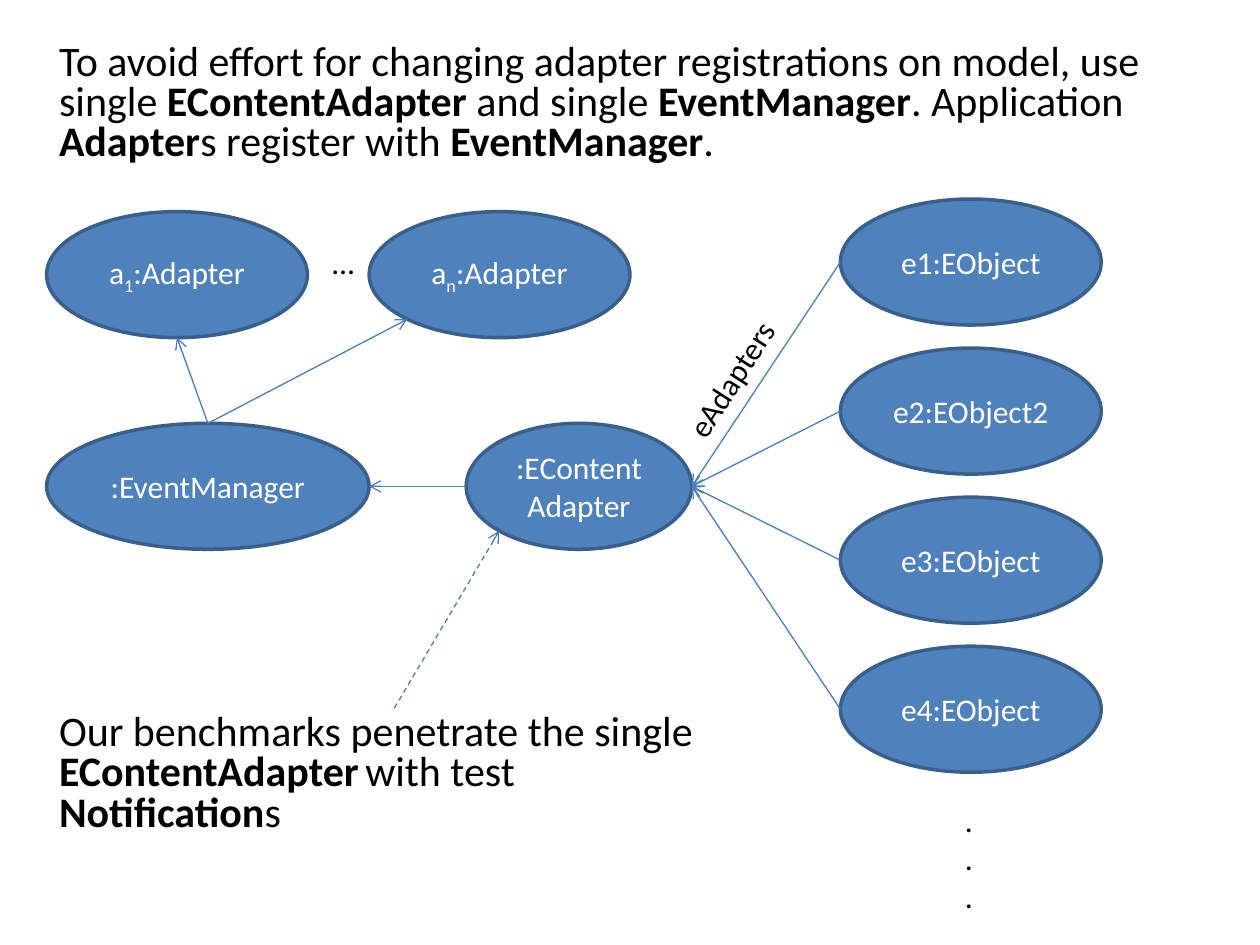
from dataclasses import dataclass
from math import sqrt

from lxml import etree
from pptx import Presentation
from pptx.dml.color import RGBColor
from pptx.enum.dml import MSO_LINE_DASH_STYLE as DASH
from pptx.enum.shapes import MSO_CONNECTOR, MSO_SHAPE
from pptx.enum.text import MSO_ANCHOR, MSO_AUTO_SIZE, PP_ALIGN
from pptx.oxml.ns import qn
from pptx.util import Inches, Pt


@dataclass(frozen=True)
class Theme:
    font: str = "Calibri"
    fill: RGBColor = RGBColor(0x4F, 0x81, 0xBD)
    outline: RGBColor = RGBColor(0x3A, 0x5F, 0x8C)
    arrow: RGBColor = RGBColor(0x4B, 0x7E, 0xBC)
    light: RGBColor = RGBColor(0xFF, 0xFF, 0xFF)
    dark: RGBColor = RGBColor(0x00, 0x00, 0x00)
    label: int = 18
    body: int = 24
    gap: int = 16


THEME = Theme()
HEIGHT = 1  # every ellipse
DIAGONAL = 1 / sqrt(2)


def add_span(para, text, size, color, bold=False, baseline=None):
    span = para.add_run()
    span.text = text
    font = span.font
    font.name, font.size, font.bold = THEME.font, Pt(size), bold
    font.color.rgb = color
    if baseline:
        font._element.set("baseline", str(baseline))


def add_ellipse(page, left, top, width, name, subscript="", rest=""):
    oval = page.shapes.add_shape(
        MSO_SHAPE.OVAL, Inches(left), Inches(top), Inches(width), Inches(HEIGHT))
    oval.shadow.inherit = False
    oval.fill.solid()
    oval.fill.fore_color.rgb = THEME.fill
    oval.line.color.rgb = THEME.outline
    oval.line.width = Pt(2)
    frame = oval.text_frame
    frame.word_wrap = True
    frame.vertical_anchor = MSO_ANCHOR.MIDDLE
    para = frame.paragraphs[0]
    para.alignment = PP_ALIGN.CENTER
    add_span(para, name, THEME.label, THEME.light)
    if subscript:
        add_span(para, subscript, THEME.label, THEME.light, baseline=-25000)
        add_span(para, rest, THEME.label, THEME.light)
    return oval


def rim(oval, across, down):
    """Point on an ellipse, as a direction in half-widths and half-heights."""
    return (int(oval.left + oval.width * (1 + across) / 2),
            int(oval.top + oval.height * (1 + down) / 2))


def add_arrow(page, start, end, dashed=False):
    arrow = page.shapes.add_connector(MSO_CONNECTOR.STRAIGHT, *start, *end)
    arrow.line.color.rgb = THEME.arrow
    arrow.line.width = Pt(0.75)
    if dashed:
        arrow.line.dash_style = DASH.DASH
    etree.SubElement(arrow.line._get_or_add_ln(), qn("a:tailEnd"), type="arrow")
    etree.SubElement(arrow._element.spPr, qn("a:effectLst"))
    return arrow


def add_box(page, left, top, width, height, wrap):
    box = page.shapes.add_textbox(
        Inches(left), Inches(top), Inches(width), Inches(height))
    box.text_frame.word_wrap = wrap
    box.text_frame.auto_size = MSO_AUTO_SIZE.SHAPE_TO_FIT_TEXT
    return box


def add_label(page, left, top, width, height, lines, rotation=0):
    box = add_box(page, left, top, width, height, wrap=False)
    box.rotation = rotation
    frame = box.text_frame
    for index, line in enumerate(lines):
        para = frame.add_paragraph() if index else frame.paragraphs[0]
        add_span(para, line, THEME.label, THEME.dark)


def add_statement(page, top, width, spans):
    box = add_box(page, 0.37, top, width, 1.09, wrap=True)
    para = box.text_frame.paragraphs[0]
    para.line_spacing = 0.8
    for text, bold, size in spans:
        add_span(para, text, size, THEME.dark, bold)


def main():
    deck = Presentation()
    deck.slide_width, deck.slide_height = Inches(10), Inches(7.5)
    page = deck.slides.add_slide(deck.slide_layouts[6])
    body = THEME.body

    # Statements
    add_statement(page, 0.3, 9.25, [
        ("To avoid effort for changing adapter registrations on model, use single ",
         False, body),
        ("EContentAdapter ", True, body),
        ("and single ", False, body),
        ("EventManager", True, body),
        (". Application ", False, body),
        ("Adapter", True, body),
        ("s register with ", False, body),
        ("EventManager", True, body),
        (".", False, body),
    ])
    add_statement(page, 5.62, 5.51, [
        ("Our benchmarks penetrate the single ", False, body),
        ("EContentAdapter", True, body),
        (" ", False, THEME.gap),
        ("with test ", False, body),
        ("Notification", True, body),
        ("s", False, body),
    ])

    # Objects
    names = ("e1:EObject", "e2:EObject2", "e3:EObject", "e4:EObject")
    objects = [add_ellipse(page, 6.67, 1.58 + 1.183 * row, 2.07, name)
               for row, name in enumerate(names)]
    content = add_ellipse(page, 3.7, 3.36, 1.79, ":EContentAdapter")
    manager = add_ellipse(page, 0.37, 3.36, 2.56, ":EventManager")
    first = add_ellipse(page, 0.37, 1.68, 2.07, "a", "1", ":Adapter")
    last = add_ellipse(page, 2.93, 1.68, 2.07, "a", "n", ":Adapter")

    # Labels
    add_label(page, 7.56, 6.31, 0.27, 1.01, [".", ".", "."])
    add_label(page, 2.54, 1.88, 0.38, 0.4, ["…"])
    add_label(page, 5.18, 2.8, 1.25, 0.4, ["eAdapters"], rotation=302.7)

    # Notifications: objects to content adapter to manager to adapters
    for item in objects:
        add_arrow(page, rim(item, -1, 0), rim(content, 1, 0))
    add_arrow(page, rim(content, -1, 0), rim(manager, 1, 0))
    for end in (rim(first, 0, 1), rim(last, -DIAGONAL, DIAGONAL)):
        add_arrow(page, rim(manager, 0, -1), end).begin_connect(manager, 0)
    add_arrow(page, (Inches(3.13), Inches(5.62)),
              rim(content, -DIAGONAL, DIAGONAL), dashed=True)

    deck.save("out.pptx")


if __name__ == "__main__":
    main()
